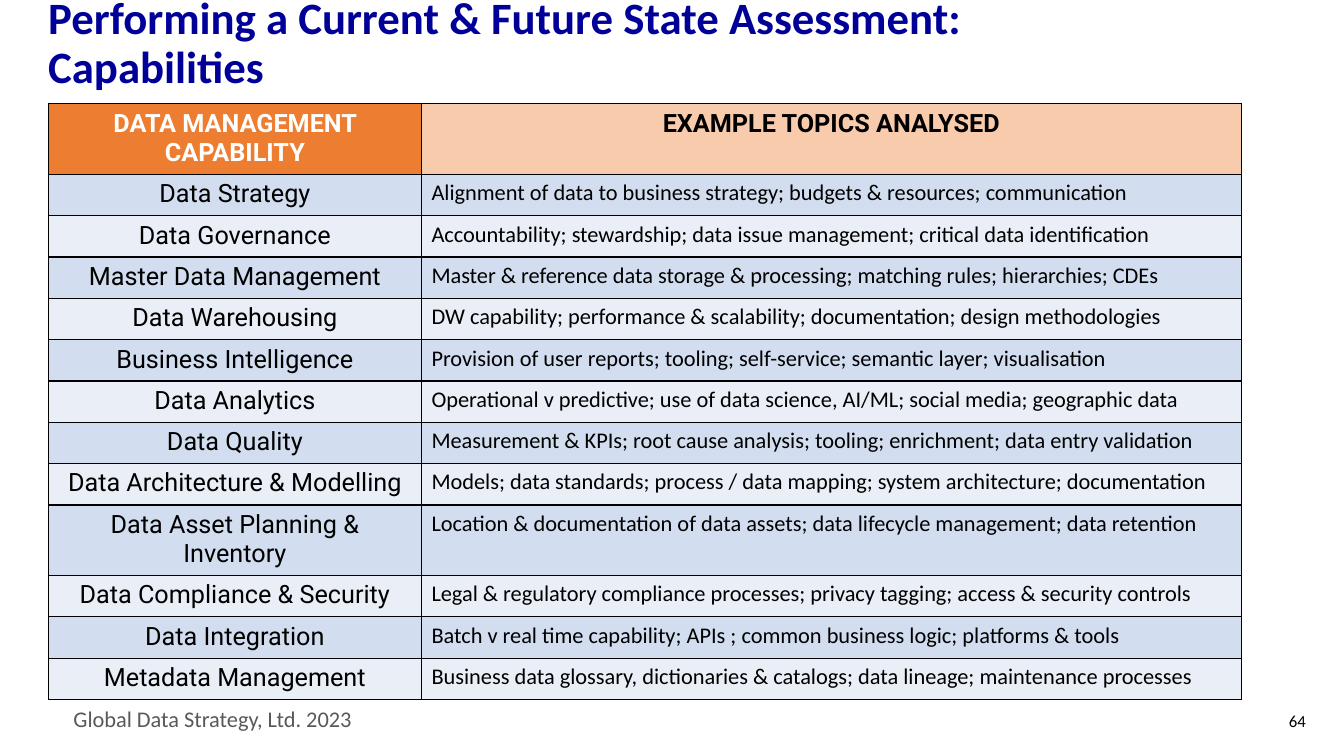
from lxml import etree
from pptx import Presentation
from pptx.dml.color import RGBColor as Rgb
from pptx.enum.text import MSO_ANCHOR as Anchor, PP_ALIGN as Align
from pptx.oxml import parse_xml
from pptx.util import Inches, Pt

THEME = {
    "title": {"name": "Calibri", "size": 32, "bold": True, "color": "000099"},
    "footer": {"name": "Calibri", "size": 16, "bold": False, "color": "595959"},
    "number": {"name": "Calibri", "size": 12, "bold": False, "color": "000000"},
    "capability_head": {"name": "Roboto", "size": 18, "bold": True, "color": "FFFFFF"},
    "topics_head": {"name": "Roboto", "size": 18, "bold": True, "color": "000000"},
    "capability": {"name": "Roboto", "size": 18, "bold": False, "color": "000000"},
    "topics": {"name": "Calibri", "size": 16, "bold": False, "color": "000000"},
    "head_fills": ("ED7D31", "F8CBAD"),
    "band_fills": ("D2DEEF", "EAEFF7"),
    "border": "000000",
}
WIDTH, HEIGHT = 13.33, 7.5
COLUMNS = (3.7, 8.13)
HEAD_ROW, BODY_ROW = 0.52, 0.41

CAPABILITIES = [
    ("DATA MANAGEMENT CAPABILITY", "EXAMPLE TOPICS ANALYSED"),
    ("Data Strategy", "Alignment of data to business strategy; budgets & resources; communication"),
    ("Data Governance", "Accountability; stewardship; data issue management; critical data identification"),
    ("Master Data Management", "Master & reference data storage & processing; matching rules; hierarchies; CDEs"),
    ("Data Warehousing", "DW capability; performance & scalability; documentation; design methodologies"),
    ("Business Intelligence", "Provision of user reports; tooling; self-service; semantic layer; visualisation"),
    ("Data Analytics", "Operational v predictive; use of data science, AI/ML; social media; geographic data"),
    ("Data Quality", "Measurement & KPIs; root cause analysis; tooling; enrichment; data entry validation"),
    ("Data Architecture & Modelling", "Models; data standards; process / data mapping; system architecture; documentation"),
    ("Data Asset Planning & Inventory", "Location & documentation of data assets; data lifecycle management; data retention"),
    ("Data Compliance & Security", "Legal & regulatory compliance processes; privacy tagging; access & security controls"),
    ("Data Integration", "Batch v real time capability; APIs ; common business logic; platforms & tools"),
    ("Metadata Management", "Business data glossary, dictionaries & catalogs; data lineage; maintenance processes"),
]


def write(frame, wording, role, align=Align.LEFT, spacing=None):
    paragraph = frame.paragraphs[0]
    paragraph.text = wording
    paragraph.alignment = align
    paragraph.line_spacing = spacing
    look = THEME[role]
    for run in paragraph.runs:
        for key, value in {**look, "size": Pt(look["size"])}.items():
            if key == "color":
                run.font.color.rgb = Rgb.from_string(value)
            else:
                setattr(run.font, key, value)


def outline(cell):
    for side in ("lnL", "lnR", "lnT", "lnB"):
        edge = parse_xml(
            f'<a:{side} xmlns:a="http://schemas.openxmlformats.org/drawingml/2006/main" w="{Pt(1)}">'
            f'<a:solidFill><a:srgbClr val="{THEME["border"]}"/></a:solidFill></a:{side}>'
        )
        cell._tc.get_or_add_tcPr().append(edge)


deck = Presentation()
deck.slide_width, deck.slide_height = Inches(WIDTH), Inches(HEIGHT)
slide = deck.slides.add_slide(deck.slide_layouts[6])

labels = [
    ("Global Data Strategy, Ltd. 2023", "footer", (0.63, 6.95, 3.62, 0.37),
     Align.LEFT, None, {"vertical_anchor": Anchor.TOP}),
    ("Performing a Current & Future State Assessment:\vCapabilities", "title", (0.38, 0.34, 11.5, 0.68),
     Align.LEFT, 0.9, {"vertical_anchor": Anchor.MIDDLE, "margin_bottom": Inches(0.53)}),
    ("64", "number", (12.42, 6.95, 0.63, 0.4),
     Align.RIGHT, None, {"vertical_anchor": Anchor.MIDDLE}),
]
for wording, role, place, align, spacing, layout in labels:
    frame = slide.shapes.add_textbox(*map(Inches, place)).text_frame
    for key, value in {"word_wrap": True, **layout}.items():
        setattr(frame, key, value)
    write(frame, wording, role, align, spacing)

heights = [HEAD_ROW] + [BODY_ROW] * (len(CAPABILITIES) - 1)
assessment = slide.shapes.add_table(
    len(CAPABILITIES), len(COLUMNS),
    *map(Inches, (0.48, 1.03, sum(COLUMNS), sum(heights))),
).table
for key, value in {"first_row": False, "horz_banding": False}.items():
    setattr(assessment, key, value)
for column, width in zip(assessment.columns, COLUMNS):
    column.width = Inches(width)

for r, (entry, height) in enumerate(zip(CAPABILITIES, heights)):
    assessment.rows[r].height = Inches(height)
    for c, (wording, role) in enumerate(zip(entry, ("capability", "topics"))):
        cell = assessment.cell(r, c)
        outline(cell)
        cell.fill.solid()
        shade = THEME["band_fills"][(r - 1) % 2] if r else THEME["head_fills"][c]
        cell.fill.fore_color.rgb = Rgb.from_string(shade)
        align = Align.LEFT if r and c else Align.CENTER
        write(cell.text_frame, wording, role if r else f"{role}_head", align)

deck.save("out.pptx")
